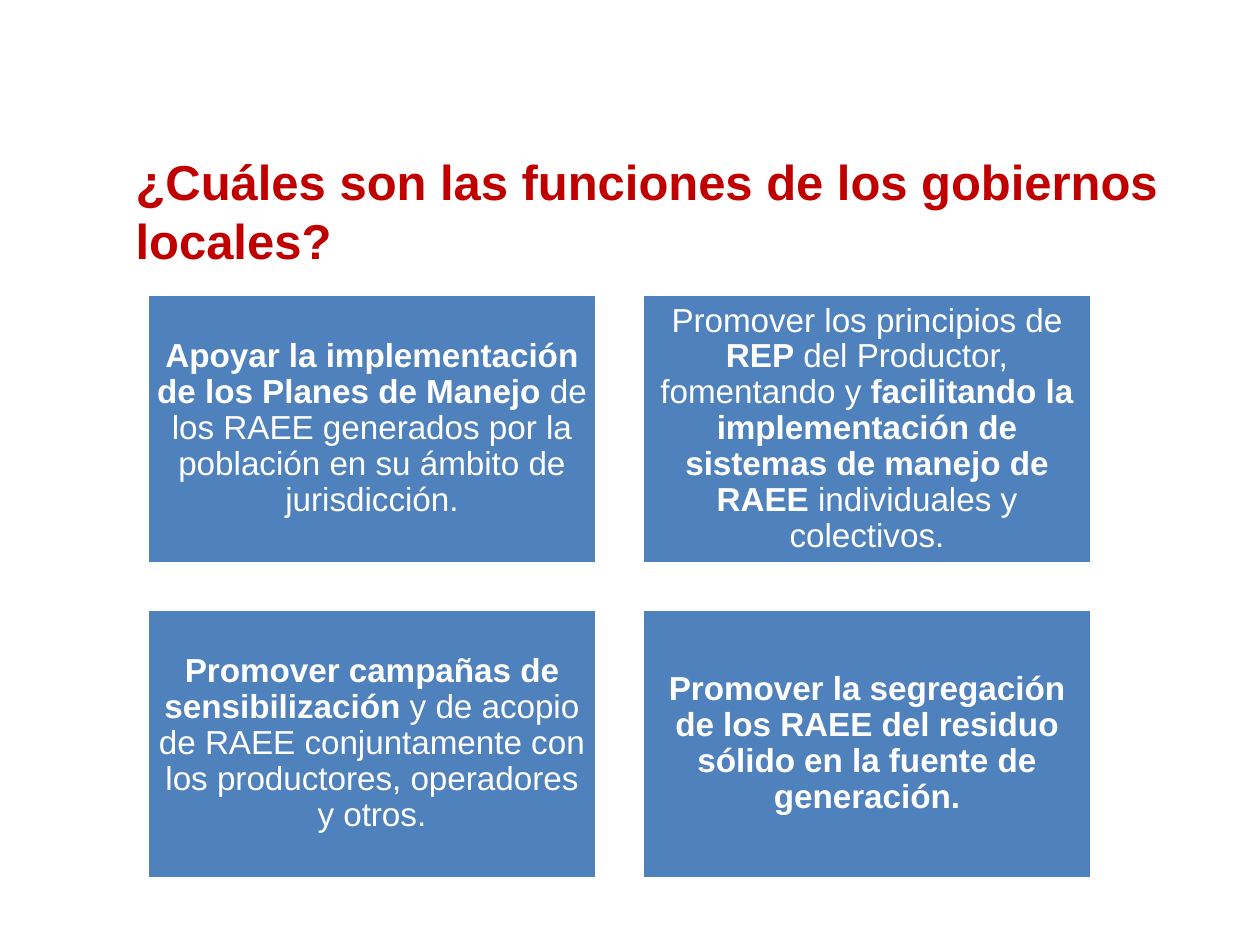
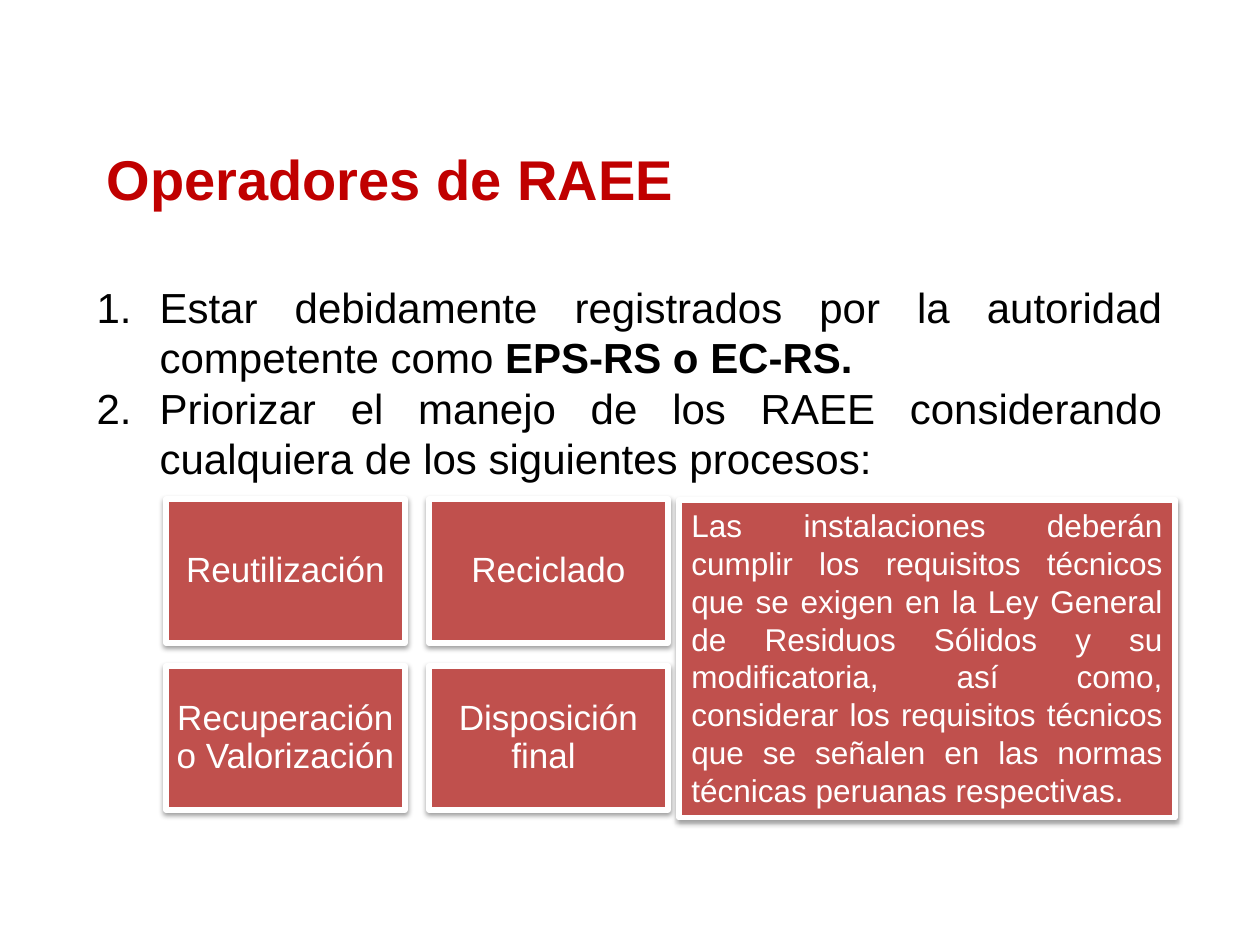
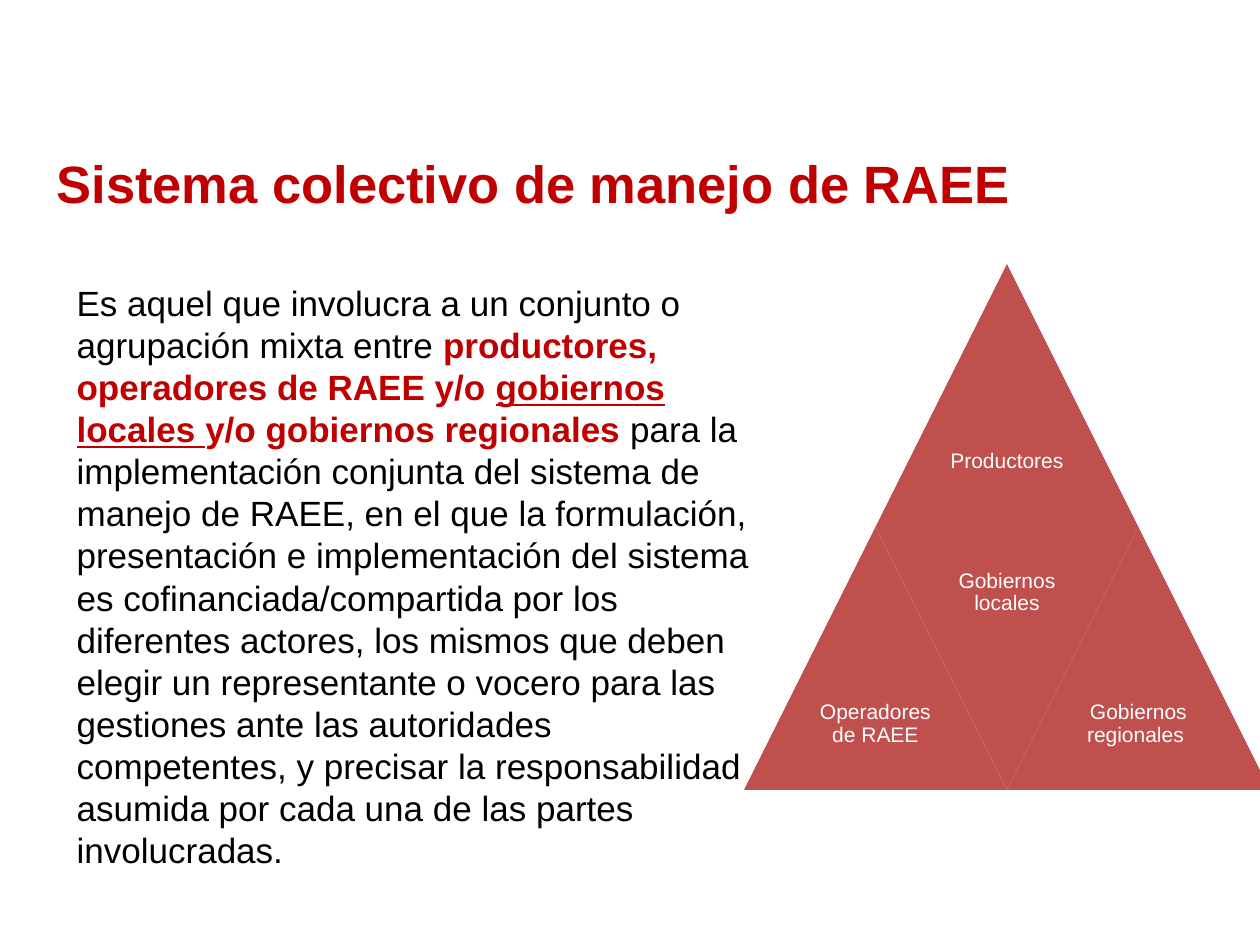
from lxml.etree import SubElement
from pptx import Presentation
from pptx.dml.color import RGBColor
from pptx.enum.shapes import MSO_SHAPE
from pptx.enum.text import MSO_ANCHOR, MSO_AUTO_SIZE, PP_ALIGN
from pptx.oxml.ns import qn
from pptx.util import Emu, Pt

RED = RGBColor(0xC0, 0x00, 0x00)
BRICK = RGBColor(0xC0, 0x50, 0x4D)
BLUE = RGBColor(0x4F, 0x81, 0xBD)
BLACK = RGBColor(0, 0, 0)
WHITE = RGBColor(255, 255, 255)

EMU_PER_PX = 914400 / 126
PLAIN = {}
BOLD = {"bold": True}
RED_BOLD = {"bold": True, "color": RED}
RED_UNDERLINED = {"bold": True, "color": RED, "underline": True}


def write(shape, paragraphs, *, box=None, size, color=WHITE, align=PP_ALIGN.CENTER,
          anchor=MSO_ANCHOR.MIDDLE, inset=None, spacing=None, numbered=False):
    """Fill shape with paragraphs, each a list of (words, style) runs; box moves it first."""
    if box:
        shape.left, shape.top, shape.width, shape.height = [Emu(round(n * EMU_PER_PX)) for n in box]
    frame = shape.text_frame
    frame.word_wrap = True
    frame.auto_size = MSO_AUTO_SIZE.NONE
    frame.vertical_anchor = anchor
    if inset is not None:
        frame.margin_left = frame.margin_top = Emu(round(inset * EMU_PER_PX))
        frame.margin_right = frame.margin_bottom = frame.margin_left
    for index, runs in enumerate(paragraphs):
        paragraph = frame.add_paragraph() if index else frame.paragraphs[0]
        properties = paragraph._p.get_or_add_pPr()
        indent = round(63 * EMU_PER_PX) if numbered else 0
        properties.set("marL", str(indent))
        properties.set("indent", str(-indent))
        if numbered:
            SubElement(properties, qn("a:buAutoNum"), type="arabicPeriod")
        else:
            SubElement(properties, qn("a:buNone"))
        paragraph.alignment = align
        paragraph.space_before = Pt(0)
        if spacing:
            paragraph.line_spacing = spacing
        for words, style in runs:
            run = paragraph.add_run()
            run.text = words
            run.font.name = "Arial"
            run.font.size = Pt(size)
            run.font.bold = style.get("bold", False)
            run.font.underline = style.get("underline", False)
            run.font.color.rgb = style.get("color", color)


def add_block(slide, preset, box, fill, border=0, shadow=False):
    block = slide.shapes.add_shape(preset, *[Emu(round(n * EMU_PER_PX)) for n in box])
    block.shadow.inherit = False
    block.fill.solid()
    block.fill.fore_color.rgb = fill
    if border:
        block.line.color.rgb = WHITE
        block.line.width = Pt(border)
    else:
        block.line.fill.background()
    if shadow:
        effects = block._element.spPr.find(qn("a:effectLst"))
        outer = SubElement(effects, qn("a:outerShdw"), blurRad="40000", dist="20000",
                           dir="5400000", rotWithShape="0")
        tint = SubElement(outer, qn("a:srgbClr"), val="000000")
        SubElement(tint, qn("a:alpha"), val="38000")
    return block


prs = Presentation()
prs.slide_width = Emu(round(1260 * EMU_PER_PX))
prs.slide_height = Emu(round(945 * EMU_PER_PX))
TITLE_AND_BODY, TITLE_ONLY = prs.slide_layouts[1], prs.slide_layouts[5]
TITLE_STYLE = {"color": RED, "align": PP_ALIGN.LEFT, "anchor": MSO_ANCHOR.TOP}

# Local governments
governments = prs.slides.add_slide(TITLE_ONLY)
write(governments.shapes.title,
      [[("¿Cuáles son las funciones de los gobiernos locales?", BOLD)]],
      box=(123, 145, 1103, 131), size=28, **TITLE_STYLE)

duties = [
    [("Apoyar la implementación de los Planes de Manejo ", BOLD),
     ("de los RAEE generados por la población en su ámbito de jurisdicción.", PLAIN)],
    [("Promover los principios de ", PLAIN), ("REP", BOLD),
     (" del Productor, fomentando y ", PLAIN),
     ("facilitando la implementación de sistemas de manejo de RAEE", BOLD),
     (" individuales y colectivos.", PLAIN)],
    [("Promover campañas de sensibilización ", BOLD),
     ("y de acopio de RAEE conjuntamente con los productores, operadores y otros.", PLAIN)],
    [("Promover la segregación de los RAEE del residuo sólido en la fuente de generación.", BOLD)],
]
for index, duty in enumerate(duties):
    row, column = divmod(index, 2)
    card = add_block(governments, MSO_SHAPE.RECTANGLE,
                     (147 + 495 * column, 294 + 315 * row, 450, 270), BLUE, border=2)
    write(card, [duty], size=19, inset=10, spacing=0.9)

# Operators
operators = prs.slides.add_slide(TITLE_AND_BODY)
write(operators.shapes.title, [[("Operadores de RAEE", BOLD)]],
      box=(94, 138, 844, 86), size=32, **TITLE_STYLE)
write(operators.placeholders[1], [
    [("Estar debidamente registrados por la autoridad competente como ", PLAIN),
     ("EPS-RS o EC-RS.", BOLD)],
    [("Priorizar el manejo de los RAEE considerando cualquiera de los siguientes procesos:", PLAIN)],
], box=(84, 275, 1091, 267), size=24, color=BLACK, align=PP_ALIGN.JUSTIFY,
      anchor=MSO_ANCHOR.TOP, numbered=True)

processes = ["Reutilización", "Reciclado", "Recuperación o Valorización", "Disposición final "]
for index, process in enumerate(processes):
    row, column = divmod(index, 2)
    card = add_block(operators, MSO_SHAPE.RECTANGLE,
                     (166 + 263 * column, 499 + 167 * row, 239, 144), BRICK,
                     border=3, shadow=True)
    write(card, [[(process, PLAIN)]], size=20, inset=10, spacing=0.9)

requirements = add_block(operators, MSO_SHAPE.RECTANGLE, (679, 500, 496, 318), BRICK,
                         border=3, shadow=True)
write(requirements, [[(
    "Las instalaciones deberán cumplir los requisitos técnicos que se exigen en la Ley General "
    "de Residuos Sólidos y su modificatoria, así como, considerar los requisitos técnicos que se "
    "señalen en las normas técnicas peruanas respectivas.", PLAIN)]],
      size=18, align=PP_ALIGN.JUSTIFY, anchor=MSO_ANCHOR.TOP)

# Collective system
collective = prs.slides.add_slide(TITLE_AND_BODY)
write(collective.shapes.title, [[("Sistema colectivo de manejo de RAEE", BOLD)]],
      box=(44, 145, 1160, 139), size=30, **TITLE_STYLE)
write(collective.placeholders[1], [[
    ("Es aquel que involucra a un conjunto o agrupación mixta entre ", PLAIN),
    ("productores, operadores de RAEE y/o ", RED_BOLD),
    ("gobiernos locales ", RED_UNDERLINED),
    ("y/o gobiernos regionales ", RED_BOLD),
    ("para la implementación conjunta del sistema de manejo de RAEE, en el que la formulación, "
     "presentación e implementación del sistema es cofinanciada/compartida por los diferentes "
     "actores, los mismos que deben elegir un representante o vocero para las gestiones ante las "
     "autoridades competentes, y precisar la responsabilidad asumida por cada una de las partes "
     "involucradas.", PLAIN),
]], box=(64, 273, 714, 606), size=20, color=BLACK, align=PP_ALIGN.LEFT)

side = 263
half = side / 2
actors = [  # name, half sides from the left, row, rotation
    ("Productores", 1, 0, 0),
    ("Operadores de RAEE", 0, 1, 0),
    ("Gobiernos locales", 1, 1, 180),
    ("Gobiernos regionales ", 2, 1, 0),
]
for actor, step, row, rotation in actors:
    left, top = 744 + half * step, 264 + side * row
    triangle = add_block(collective, MSO_SHAPE.ISOSCELES_TRIANGLE, (left, top, side, side), BRICK)
    triangle.rotation = rotation
    label, label_box = triangle, None
    if rotation:
        label = collective.shapes.add_textbox(0, 0, 0, 0)
        label_box = (left + half / 2, top, half, half)
    write(label, [[(actor, PLAIN)]], box=label_box, size=12, inset=6, spacing=0.9)

prs.save("out.pptx")
